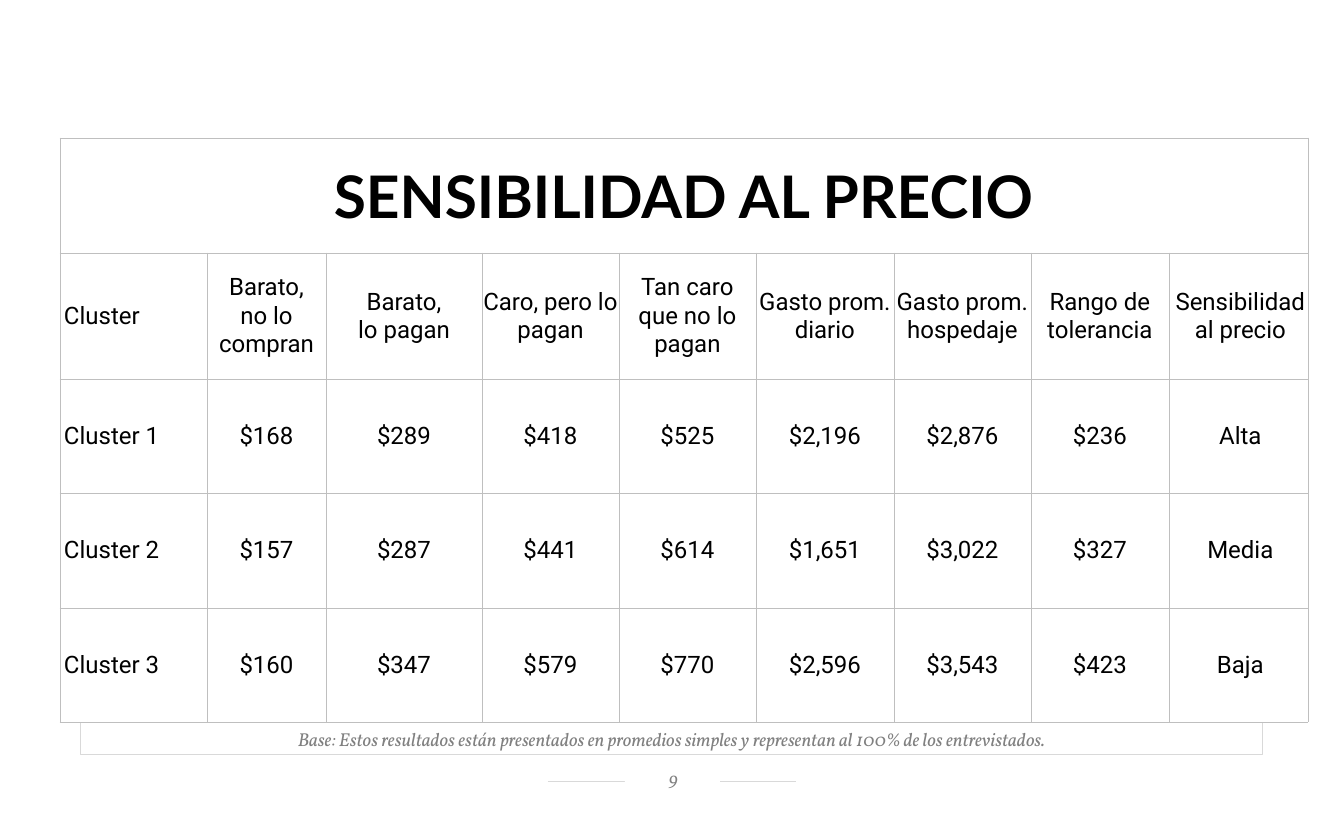
from dataclasses import dataclass

from lxml import etree
from pptx import Presentation
from pptx.dml.color import RGBColor
from pptx.enum.shapes import MSO_CONNECTOR, MSO_SHAPE
from pptx.enum.text import MSO_ANCHOR, PP_ALIGN
from pptx.oxml.ns import qn
from pptx.util import Pt

PX = 9525
LEFT, CENTER = PP_ALIGN.LEFT, PP_ALIGN.CENTER
MIDDLE, BOTTOM = MSO_ANCHOR.MIDDLE, MSO_ANCHOR.BOTTOM
RECT, STRAIGHT = MSO_SHAPE.RECTANGLE, MSO_CONNECTOR.STRAIGHT


@dataclass
class Theme:
    ink: str = "000000"
    note: str = "808080"
    rule: str = "D9D9D9"
    grid: str = "BFBFBF"
    paper: str = "FFFFFF"
    head_size: int = 44
    body_size: int = 18
    note_size: int = 14
    head_font: str = "Lato"
    body_font: str = "Roboto"
    note_font: str = "Vollkorn"


theme = Theme()


def style(para, face, size, color, align, bold=False, italic=False):
    para.alignment = align
    font = para.font
    font.name, font.size, font.bold, font.italic = face, Pt(size), bold, italic
    font.color.rgb = RGBColor.from_string(color)


def border(cell):
    props = cell._tc.get_or_add_tcPr()
    for spot, side in enumerate(("a:lnL", "a:lnR", "a:lnT", "a:lnB")):
        line = etree.Element(qn(side), w=str(Pt(0.5)))
        fill = etree.SubElement(line, qn("a:solidFill"))
        etree.SubElement(fill, qn("a:srgbClr"), val=theme.grid)
        props.insert(spot, line)


deck = Presentation()
deck.slide_width, deck.slide_height = 1344 * PX, 816 * PX
slide = deck.slides.add_slide(deck.slide_layouts[6])

rule = slide.shapes.add_connector(STRAIGHT, 548 * PX, 781 * PX, 796 * PX, 781 * PX)
rule.line.color.rgb = RGBColor.from_string(theme.rule)
rule.line.width = Pt(0.5)
etree.SubElement(rule._element.spPr, qn("a:effectLst"))

base = "Base: Estos resultados están presentados en promedios simples y representan al 100% de los entrevistados."
notes = [
    (base, (81, 723, 1182, 32), BOTTOM, (10, 5, 10, 5), False),
    ("9", (625, 766, 95, 28), MIDDLE, (12, 2, 10, 5), True),
]
for text, place, anchor, inset, solid in notes:
    box = slide.shapes.add_shape(RECT, *[n * PX for n in place])
    box.shadow.inherit = False
    if solid:
        box.fill.solid()
        box.fill.fore_color.rgb = RGBColor.from_string(theme.paper)
        box.line.fill.background()
    else:
        box.fill.background()
        box.line.color.rgb = RGBColor.from_string(theme.rule)
        box.line.width = Pt(0.75)
    frame = box.text_frame
    frame.word_wrap = True
    frame.vertical_anchor = anchor
    frame.margin_left, frame.margin_top, frame.margin_right, frame.margin_bottom = [n * PX for n in inset]
    frame.text = text
    style(frame.paragraphs[0], theme.note_font, theme.note_size, theme.note, CENTER, italic=True)

rows = [
    ["SENSIBILIDAD AL PRECIO"] + [""] * 8,
    ["Cluster", "Barato,\nno lo compran", "Barato,\nlo pagan", "Caro, pero lo pagan",
     "Tan caro que no lo pagan", "Gasto prom. diario", "Gasto prom. hospedaje",
     "Rango de tolerancia", "Sensibilidad al precio"],
    ["Cluster 1", "$168", "$289", "$418", "$525", "$2,196", "$2,876", "$236", "Alta"],
    ["Cluster 2", "$157", "$287", "$441", "$614", "$1,651", "$3,022", "$327", "Media"],
    ["Cluster 3", "$160", "$347", "$579", "$770", "$2,596", "$3,543", "$423", "Baja"],
]
widths = [147, 119, 156, 137, 137, 138, 137, 138, 139]
heights = [115, 126, 114, 115, 114]
last = len(widths) - 1

table = slide.shapes.add_table(
    len(rows), len(widths), 60 * PX, 138 * PX, sum(widths) * PX, sum(heights) * PX
).table
table.first_row = table.horz_banding = False
for col, width in zip(table.columns, widths):
    col.width = width * PX
for row, height in zip(table.rows, heights):
    row.height = height * PX
table.cell(0, 0).merge(table.cell(0, last))

for r, texts in enumerate(rows):
    for c, text in enumerate(texts):
        cell = table.cell(r, c)
        cell.fill.background()
        border(cell)
        cell.vertical_anchor = MIDDLE
        cell.margin_left = 4 * PX if r and c in (0, last) else 0
        cell.margin_right = cell.margin_top = cell.margin_bottom = 0
        if not text:
            continue
        cell.text = text
        for para in cell.text_frame.paragraphs:
            if r == 0:
                style(para, theme.head_font, theme.head_size, theme.ink, CENTER, bold=True)
            else:
                style(para, theme.body_font, theme.body_size, theme.ink, CENTER if c else LEFT)

deck.save("out.pptx")
